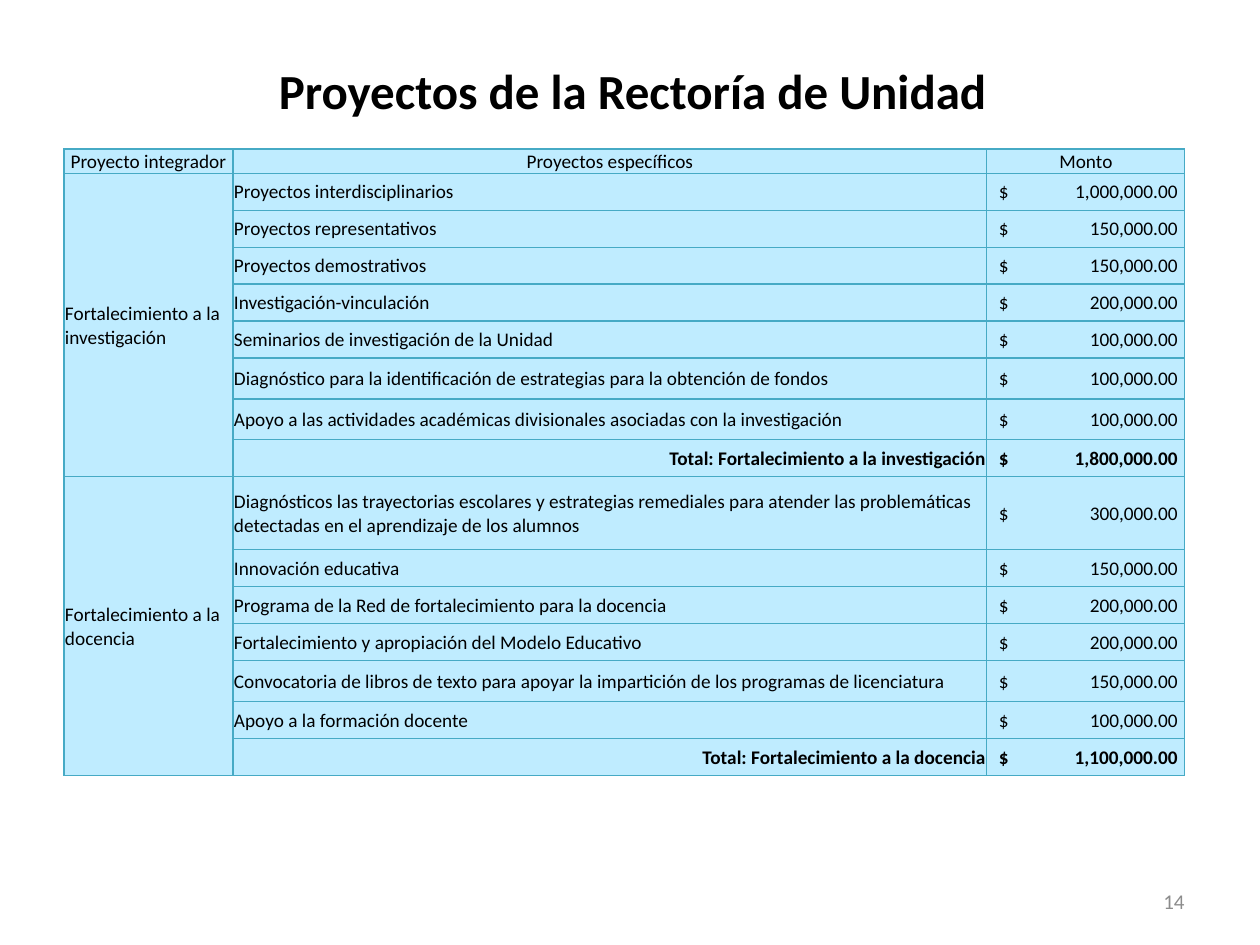
from lxml.etree import SubElement
from pptx import Presentation
from pptx.dml.color import RGBColor
from pptx.enum.text import MSO_ANCHOR as Anchor, MSO_AUTO_SIZE as AutoSize, PP_ALIGN as Align
from pptx.oxml.ns import qn
from pptx.util import Pt

PX = 914400 // 126
FONT, BLACK, GREY = "Calibri", "000000", "8C8C8C"
CELL_FILL, BORDER = "BFECFF", "46AAC5"

TITLE = "Proyectos de la Rectoría de Unidad"
PAGE_NUMBER = "14"
HEADERS = ["Proyecto integrador", "Proyectos específicos", "Monto"]
HEADER_HEIGHT = 24
COLUMN_WIDTHS = [169, 754, 198]
PROGRAMS = [
    ("Fortalecimiento a la investigación", [
        ("Proyectos interdisciplinarios", "1,000,000.00", 37),
        ("Proyectos representativos", "150,000.00", 37),
        ("Proyectos demostrativos", "150,000.00", 37),
        ("Investigación-vinculación", "200,000.00", 37),
        ("Seminarios de investigación de la Unidad", "100,000.00", 37),
        ("Diagnóstico para la identificación de estrategias para la obtención de fondos",
         "100,000.00", 41),
        ("Apoyo a las actividades académicas divisionales asociadas con la investigación",
         "100,000.00", 41),
        ("Total: Fortalecimiento a la investigación", "1,800,000.00", 37),
    ]),
    ("Fortalecimiento a la docencia", [
        ("Diagnósticos las trayectorias escolares y estrategias remediales para atender "
         "las problemáticas detectadas en el aprendizaje de los alumnos", "300,000.00", 73),
        ("Innovación educativa", "150,000.00", 37),
        ("Programa de la Red de fortalecimiento para la docencia", "200,000.00", 37),
        ("Fortalecimiento y apropiación del Modelo Educativo", "200,000.00", 37),
        ("Convocatoria de libros de texto para apoyar la impartición de los programas "
         "de licenciatura", "150,000.00", 41),
        ("Apoyo a la formación docente", "100,000.00", 37),
        ("Total: Fortalecimiento a la docencia", "1,100,000.00", 37),
    ]),
]


def color(value):
    return RGBColor.from_string(value)


def px(*values):
    return [value * PX for value in values]


def write(frame, text, size, align, bold=False, ink=BLACK):
    para = frame.paragraphs[0]
    para.text = text
    para.alignment = align
    para.font.name, para.font.size, para.font.bold = FONT, Pt(size), bold
    para.font.color.rgb = color(ink)


def add_borders(cell):
    properties = cell._tc.get_or_add_tcPr()
    for side in ("a:lnL", "a:lnR", "a:lnT", "a:lnB"):
        line = SubElement(properties, qn(side), w=str(Pt(0.75)))
        SubElement(SubElement(line, qn("a:solidFill")), qn("a:srgbClr"), val=BORDER)


def fill_cell(cell, text, align=Align.LEFT, bold=False):
    cell.vertical_anchor = Anchor.MIDDLE
    cell.margin_left, cell.margin_top, cell.margin_right, cell.margin_bottom = px(1, 1, 1, 0)
    write(cell.text_frame, text, 11, align, bold)


def fill_amount(cell, amount, bold):
    properties = cell.text_frame.paragraphs[0]._p.get_or_add_pPr()
    tabs = SubElement(properties, qn("a:tabLst"))
    SubElement(tabs, qn("a:tab"), pos=str(179 * PX), algn="r")
    fill_cell(cell, f"$\t{amount}", bold=bold)
    cell.margin_left, cell.margin_right = px(12, 5)


def add_budget_table(page):
    heights = [HEADER_HEIGHT] + [row[2] for _, rows in PROGRAMS for row in rows]
    table = page.shapes.add_table(
        len(heights), len(HEADERS),
        *px(64, 149, sum(COLUMN_WIDTHS), sum(heights))).table
    for column, width in zip(table.columns, COLUMN_WIDTHS):
        column.width = width * PX
    for row, height in zip(table.rows, heights):
        row.height = height * PX
    for cell in table.iter_cells():
        add_borders(cell)
        cell.fill.solid()
        cell.fill.fore_color.rgb = color(CELL_FILL)

    for column, header in enumerate(HEADERS):
        fill_cell(table.cell(0, column), header, Align.CENTER)
    first = 1
    for program, rows in PROGRAMS:
        last = first + len(rows) - 1
        table.cell(first, 0).merge(table.cell(last, 0))
        fill_cell(table.cell(first, 0), program)
        for index, (project, amount, _) in enumerate(rows, first):
            total = index == last
            fill_cell(table.cell(index, 1), project, Align.RIGHT if total else Align.LEFT, total)
            fill_amount(table.cell(index, 2), amount, total)
        first = last + 1


def main():
    deck = Presentation()
    deck.slide_width, deck.slide_height = px(1260, 945)
    page = deck.slides.add_slide(deck.slide_layouts[5])

    title = page.shapes.title
    title.left, title.top, title.width, title.height = px(243, 39, 779, 86)
    frame = title.text_frame
    frame.auto_size, frame.vertical_anchor = AutoSize.NONE, Anchor.MIDDLE
    frame.margin_top, frame.margin_bottom = px(21, 5)
    write(frame, TITLE, 28, Align.CENTER, True)

    number = page.shapes.add_textbox(*px(903, 876, 294, 50)).text_frame
    number.word_wrap, number.vertical_anchor = True, Anchor.MIDDLE
    write(number, PAGE_NUMBER, 12, Align.RIGHT, ink=GREY)

    add_budget_table(page)
    deck.save("out.pptx")


if __name__ == "__main__":
    main()
